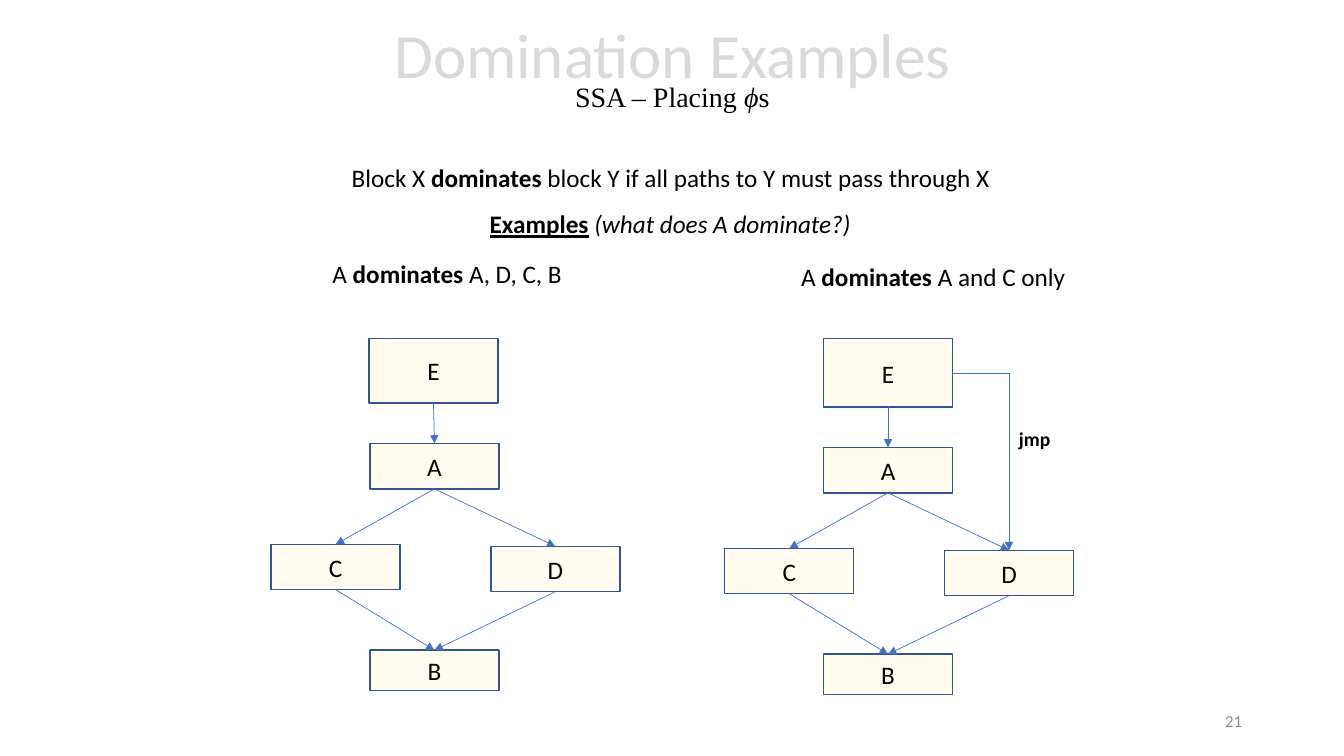
from dataclasses import dataclass

from lxml.etree import SubElement
from pptx import Presentation
from pptx.dml.color import RGBColor
from pptx.enum.shapes import MSO_CONNECTOR, MSO_SHAPE
from pptx.enum.text import MSO_ANCHOR, MSO_AUTO_SIZE, PP_ALIGN
from pptx.oxml.ns import qn
from pptx.util import Inches, Pt

CELL = Inches(0.1)
COLUMNS, ROWS = 133.33, 75
TOP, LEFT, BOTTOM, RIGHT = range(4)


@dataclass(frozen=True)
class Theme:
    """Colours, fonts and type sizes of the deck."""
    ink: str = "000000"
    heading: str = "D9D9D9"
    number: str = "8C8C8C"
    node_fill: str = "FFF2CC"
    node_opacity: int = 30
    node_line: str = "325491"
    arrow: str = "4472C4"
    body_font: str = "Calibri"
    subtitle_font: str = "Times New Roman"
    heading_size: int = 45
    subtitle_size: int = 20
    body_size: int = 18
    label_size: int = 14
    number_size: int = 12


@dataclass(frozen=True)
class Box:
    """A region in grid columns and rows."""
    left: float
    top: float
    width: float
    height: float

    def inner(self, left, top, width, height):
        """Return a box placed relative to this one."""
        return Box(self.left + left, self.top + top, width, height)

    def emu(self):
        """Return the region in slide units."""
        return [round(side * CELL) for side in
                (self.left, self.top, self.width, self.height)]


THEME = Theme()


def style_span(span, size=THEME.body_size, color=THEME.ink,
               font=THEME.body_font, marks=""):
    """Format a run; marks holds b, i and u for bold, italic, underline."""
    span.font.size = Pt(size)
    span.font.name = font
    span.font.color.rgb = RGBColor.from_string(color)
    span.font.bold = "b" in marks
    span.font.italic = "i" in marks
    span.font.underline = "u" in marks


def add_span(para, text, **style):
    """Append a formatted run to a paragraph."""
    span = para.add_run()
    span.text = text
    style_span(span, **style)


def add_text(page, box, spans, wrap=False, **style):
    """Place a line of text given as (text, marks) pairs."""
    frame = page.shapes.add_textbox(*box.emu()).text_frame
    frame.word_wrap = wrap
    frame.auto_size = MSO_AUTO_SIZE.SHAPE_TO_FIT_TEXT
    for text, marks in spans:
        add_span(frame.paragraphs[0], text, marks=marks, **style)


def add_title(page, box):
    """Place the heading and the subtitle below it."""
    frame = page.shapes.add_textbox(*box.emu()).text_frame
    frame.word_wrap = True
    frame.vertical_anchor = MSO_ANCHOR.MIDDLE
    para = frame.paragraphs[0]
    para.alignment = PP_ALIGN.CENTER
    para.line_spacing = 0.7
    add_span(para, "Domination Examples",
             size=THEME.heading_size, color=THEME.heading)
    para.add_line_break()
    for text, marks in (("SSA – Placing ", ""), ("ϕ", "i"), ("s", "")):
        add_span(para, text, size=THEME.subtitle_size,
                 font=THEME.subtitle_font, marks=marks)


def add_statement(page, box):
    """Place the definition and the heading of the examples."""
    add_text(page, box.inner(0, 0, box.width, 4),
             [("Block X ", ""), ("dominates", "b"),
              (" block Y if all paths to Y must pass through X", "")],
             wrap=True)
    add_text(page, box.inner(13.7, 4.6, 38.2, 4),
             [("Examples", "bu"), (" ", "b"), ("(what does A dominate?)", "i")])


def add_node(page, box, name):
    """Draw one named block of a flow graph."""
    node = page.shapes.add_shape(MSO_SHAPE.RECTANGLE, *box.emu())
    node.shadow.inherit = False
    node.fill.solid()
    node.fill.fore_color.rgb = RGBColor.from_string(THEME.node_fill)
    color = node._element.spPr.find(qn("a:solidFill"))[0]
    SubElement(color, qn("a:alpha"), val=str(THEME.node_opacity * 1000))
    node.line.color.rgb = RGBColor.from_string(THEME.node_line)
    node.line.width = Pt(1)
    frame = node.text_frame
    frame.text = name
    frame.vertical_anchor = MSO_ANCHOR.MIDDLE
    frame.paragraphs[0].alignment = PP_ALIGN.CENTER
    style_span(frame.paragraphs[0].runs[0])
    return node


def add_arrow(page, start, end, side=BOTTOM, kind=MSO_CONNECTOR.STRAIGHT):
    """Join a side of one block to the top of another."""
    arrow = page.shapes.add_connector(kind, 0, 0, 0, 0)
    arrow.begin_connect(start, side)
    arrow.end_connect(end, TOP)
    arrow.line.color.rgb = RGBColor.from_string(THEME.arrow)
    arrow.line.width = Pt(0.5)
    outline = arrow._element.spPr.find(qn("a:ln"))
    SubElement(outline, qn("a:tailEnd"), type="triangle")
    SubElement(arrow._element.spPr, qn("a:effectLst"))
    return arrow


def add_graph(page, box, entry_left, entry_height):
    """Draw a diamond of blocks below an entry block and return the blocks."""
    places = {
        "A": (9.8, 4, 4.5),
        "B": (9.8, 24.5, 4),
        "C": (0, 14, 4.5),
        "D": (21.8, 14.2, 4.5),
        "E": (entry_left, -entry_height, entry_height),
    }
    nodes = {name: add_node(page, box.inner(left, entry_height + top, 12.8, height), name)
             for name, (left, top, height) in places.items()}
    for start, end in ("EA", "AC", "AD", "CB", "DB"):
        add_arrow(page, nodes[start], nodes[end])
    return nodes


def add_jump(page, box, nodes):
    """Draw the labelled jump from E around A to D."""
    jump = add_arrow(page, nodes["E"], nodes["D"], RIGHT, MSO_CONNECTOR.ELBOW)
    jump._element.spPr.find(qn("a:prstGeom")).set("prst", "bentConnector2")
    add_text(page, box.inner(28.2, 8.3, 5.2, 3.4), [("jmp", "b")],
             size=THEME.label_size)


def add_page_number(page, box, number):
    """Place the page number at the right of its box."""
    frame = page.shapes.add_textbox(*box.emu()).text_frame
    frame.text = str(number)
    frame.word_wrap = True
    frame.vertical_anchor = MSO_ANCHOR.MIDDLE
    frame.paragraphs[0].alignment = PP_ALIGN.RIGHT
    style_span(frame.paragraphs[0].runs[0],
               size=THEME.number_size, color=THEME.number)


def add_domination_page(deck):
    """Build the page that compares the two flow graphs."""
    page = deck.slides.add_slide(deck.slide_layouts[6])
    add_title(page, Box(16.7, 0.1, 100, 14.5))
    add_statement(page, Box(33.9, 15.6, 72.8, 8.6))
    plain = Box(26.9, 33.6, 34.6, 34.9)
    jumping = plain.inner(45, 0, plain.width, 35.3)
    add_text(page, plain.inner(5.1, -8.5, 25, 4),
             [("A ", ""), ("dominates", "b"), (" A, D, C, B", "")])
    add_text(page, jumping.inner(6.6, -8.2, 28.5, 4),
             [("A ", ""), ("dominates", "b"), (" A and C only", "")])
    add_graph(page, plain, 9.7, 6.4)
    add_jump(page, jumping, add_graph(page, jumping, 9.8, 6.8))
    add_page_number(page, Box(94.2, 69.5, 30, 4), 21)


def main():
    """Create and save the deck."""
    deck = Presentation()
    deck.slide_width = round(COLUMNS * CELL)
    deck.slide_height = ROWS * CELL
    add_domination_page(deck)
    deck.save("out.pptx")


if __name__ == "__main__":
    main()
